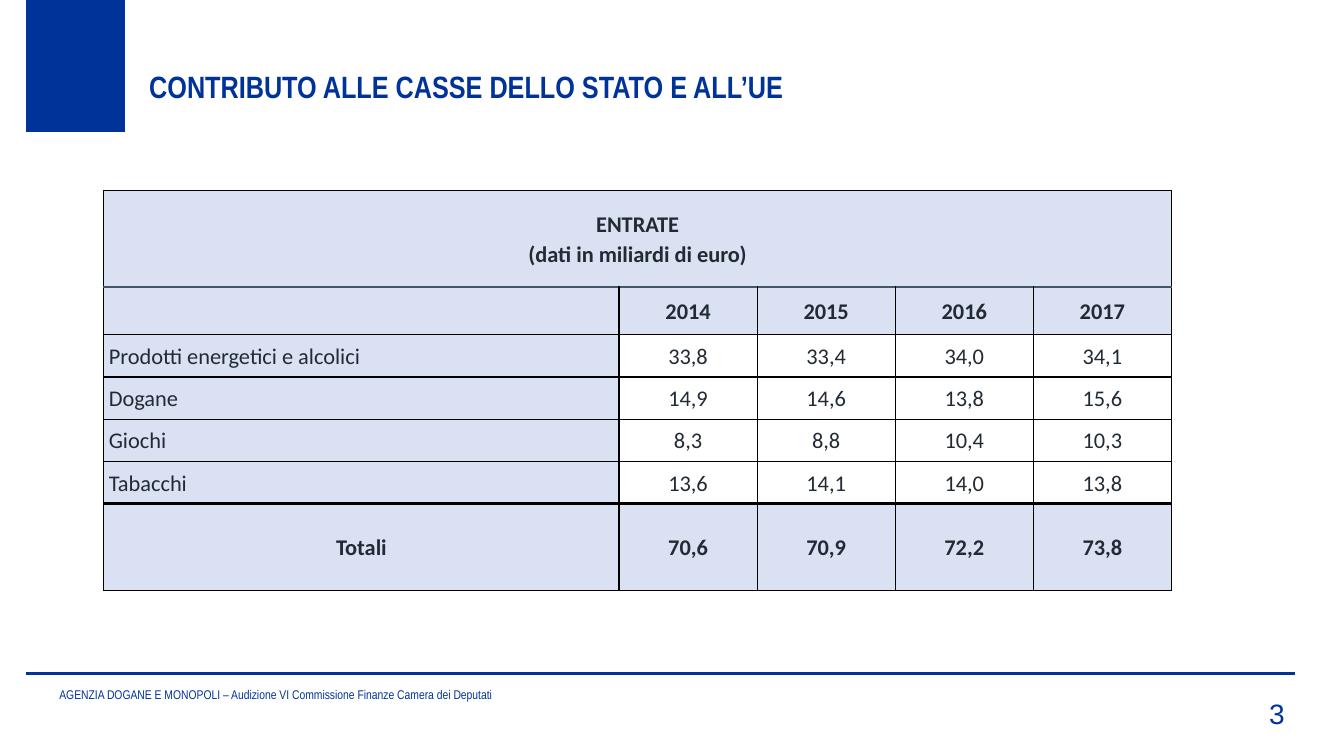
"""Builds the slide on revenue contributed to the State and the EU."""
from lxml import etree
from pptx import Presentation
from pptx.dml.color import RGBColor
from pptx.enum.shapes import MSO_CONNECTOR, MSO_SHAPE
from pptx.enum.text import MSO_ANCHOR, MSO_AUTO_SIZE, PP_ALIGN
from pptx.oxml.ns import qn
from pptx.util import Inches, Pt

LEFT, CENTER, RIGHT = PP_ALIGN.LEFT, PP_ALIGN.CENTER, PP_ALIGN.RIGHT
MIDDLE, BOTTOM = MSO_ANCHOR.MIDDLE, MSO_ANCHOR.BOTTOM
NO_FIT = MSO_AUTO_SIZE.NONE
RECT, STRAIGHT = MSO_SHAPE.RECTANGLE, MSO_CONNECTOR.STRAIGHT
BLUE = RGBColor(0x00, 0x33, 0x99)
PALE = RGBColor(0xD9, 0xE1, 0xF2)
INK = RGBColor(0x22, 0x2B, 0x35)
BLACK = RGBColor(0x00, 0x00, 0x00)
SLATE = RGBColor(0x44, 0x54, 0x6A)

HEADING = "ENTRATE\n(dati in miliardi di euro)"
ROWS = [
    [HEADING, "", "", "", ""],
    ["", "2014", "2015", "2016", "2017"],
    ["Prodotti energetici e alcolici", "33,8", "33,4", "34,0", "34,1"],
    ["Dogane", "14,9", "14,6", "13,8", "15,6"],
    ["Giochi", "8,3", "8,8", "10,4", "10,3"],
    ["Tabacchi", "13,6", "14,1", "14,0", "13,8"],
    ["Totali", "70,6", "70,9", "72,2", "73,8"],
]
COL_WIDTHS = [5.11] + [1.37] * 4
ROW_HEIGHTS = [0.96, 0.47] + [0.42] * 4 + [0.86]
THIN = (BLACK, 1)
RULES = {1: (SLATE, 1.5), 6: (BLACK, 2.25)}


class Deck:
    """Holds the style and the current slide."""

    def __init__(self):
        self.prs = Presentation()
        self.prs.slide_width, self.prs.slide_height = Inches(13.33), Inches(7.5)
        self.s = self.prs.slides.add_slide(self.prs.slide_layouts[5])

    def block(self, x, y, w, h):
        sp = self.s.shapes.add_shape(RECT, Inches(x), Inches(y), Inches(w), Inches(h))
        sp.shadow.inherit = False
        sp.fill.solid()
        sp.fill.fore_color.rgb = BLUE
        sp.line.fill.background()

    def rule(self, x1, x2, y):
        sp = self.s.shapes.add_connector(
            STRAIGHT, Inches(x1), Inches(y), Inches(x2), Inches(y))
        sp.line.color.rgb = BLUE
        sp.line.width = Pt(2.25)
        etree.SubElement(sp._element.spPr, qn("a:effectLst"))

    def add_text(self, p, text, font, size, color, bold=False, align=LEFT):
        p.alignment = align
        for i, line in enumerate(text.split("\n")):
            if i:
                p.add_line_break()
            r = p.add_run()
            r.text = line
            r.font.name, r.font.size, r.font.bold = font, Pt(size), bold
            r.font.color.rgb = color

    def title(self, x, y, w, h, text):
        sp = self.s.shapes.title
        sp.left, sp.top, sp.width, sp.height = Inches(x), Inches(y), Inches(w), Inches(h)
        tf = sp.text_frame
        tf.auto_size, tf.word_wrap, tf.vertical_anchor = NO_FIT, True, MIDDLE
        self.add_text(tf.paragraphs[0], text, "Arial Narrow", 22, BLUE, True)

    def text_box(self, x, y, w, h, text, font, size, align=LEFT, bottom=0.05):
        sp = self.s.shapes.add_textbox(Inches(x), Inches(y), Inches(w), Inches(h))
        tf = sp.text_frame
        tf.word_wrap, tf.vertical_anchor = True, BOTTOM
        tf.margin_bottom = Inches(bottom)
        self.add_text(tf.paragraphs[0], text, font, size, BLUE, align=align)

    def border(self, cell, side, color, width):
        ln = etree.SubElement(cell._tc.get_or_add_tcPr(), qn("a:ln" + side), w=str(Pt(width)))
        fill = etree.SubElement(ln, qn("a:solidFill"))
        etree.SubElement(fill, qn("a:srgbClr"), val=str(color))

    def cell(self, cell, row, col, text):
        sides = {"L": THIN, "R": THIN,
                 "T": RULES.get(row, THIN), "B": RULES.get(row + 1, THIN)}
        for side, (color, width) in sides.items():
            self.border(cell, side, color, width)
        strong = row in (0, 1, len(ROWS) - 1)
        if strong or col == 0:
            cell.fill.solid()
            cell.fill.fore_color.rgb = PALE
        else:
            cell.fill.background()
        cell.vertical_anchor = MIDDLE
        cell.margin_left = cell.margin_right = Inches(0.05)
        cell.margin_top = cell.margin_bottom = Inches(0.01)
        if text:
            p = cell.text_frame.paragraphs[0]
            p.line_spacing = 1.07
            align = CENTER if strong or col else LEFT
            self.add_text(p, text, "Calibri", 16, INK, strong, align)

    def table(self, x, y, rows):
        table = self.s.shapes.add_table(
            len(rows), len(COL_WIDTHS), Inches(x), Inches(y),
            Inches(sum(COL_WIDTHS)), Inches(sum(ROW_HEIGHTS))).table
        for column, width in zip(table.columns, COL_WIDTHS):
            column.width = Inches(width)
        for row, height in zip(table.rows, ROW_HEIGHTS):
            row.height = Inches(height)
        table.cell(0, 0).merge(table.cell(0, len(COL_WIDTHS) - 1))
        for i, row in enumerate(rows):
            for j, text in enumerate(row):
                self.cell(table.cell(i, j), i, j, text)


def main():
    deck = Deck()
    deck.block(0.26, 0, 0.98, 1.31)
    deck.rule(0.26, 12.84, 6.68)
    deck.table(1.03, 1.89, ROWS)
    deck.text_box(0.49, 6.61, 9.45, 0.4,
                  "AGENZIA DOGANE E MONOPOLI – Audizione VI Commissione Finanze Camera dei Deputati",
                  "Arial Narrow", 9)
    deck.title(1.38, 0.62, 11.74, 0.47, "CONTRIBUTO ALLE CASSE DELLO STATO E ALL’UE")
    deck.text_box(11.68, 6.71, 1.16, 0.54, "3", "Arial", 20, RIGHT, 0.01)
    deck.prs.save("out.pptx")


if __name__ == "__main__":
    main()
